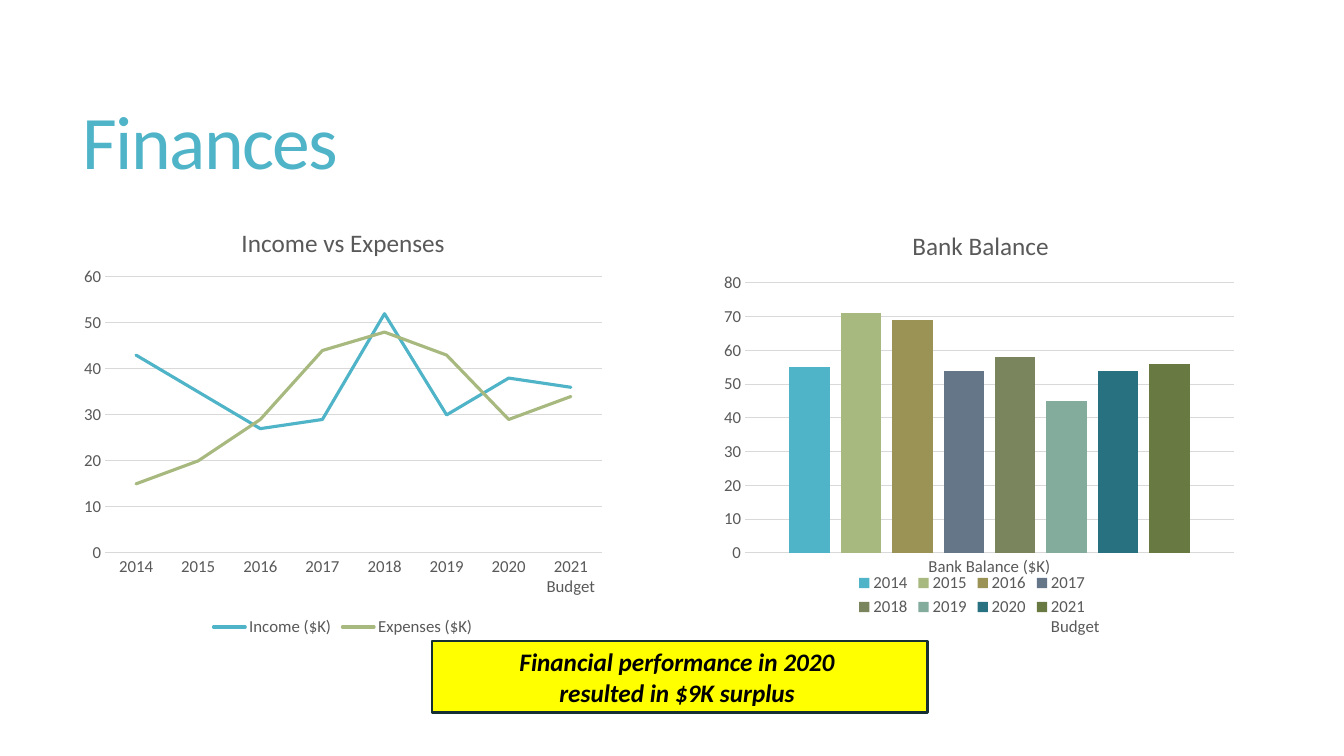
"""Build the finances slide with its two charts and callout."""
import pptx
import pptx.chart.data
import pptx.dml.color
import pptx.enum.chart
import pptx.enum.shapes
import pptx.enum.text
import pptx.oxml
import pptx.oxml.ns
import pptx.util

KIND = pptx.enum.chart.XL_CHART_TYPE
NOTE = "Financial performance in 2020 \vresulted in $9K surplus "
YEARS = ["2014", "2015", "2016", "2017", "2018", "2019", "2020"]
CHARTS = [
    {"title": "Income vs Expenses", "kind": KIND.LINE, "box": (73, 202, 540, 439),
     "plot": (105, 277, 497, 276), "head": (237, 221), "top": 60,
     "cats": YEARS + ["2021 Budget"],
     "rows": [("Income ($K)", [43, 35, 27, 29, 52, 30, 38, 36]),
              ("Expenses ($K)", [15, 20, 29, 44, 48, 43, 29, 34])]},
    {"title": "Bank Balance", "kind": KIND.COLUMN_CLUSTERED, "box": (714, 202, 531, 439),
     "plot": (745, 283, 489, 270), "head": (908, 224), "top": 80,
     "cats": ["Bank Balance ($K)"],
     "rows": [(year, [val]) for year, val in zip(
         YEARS + ["2021 \nBudget"], [55, 71, 69, 54, 58, 45, 54, 56])]},
]
THEME = {
    "font": "Calibri", "title": "50B4C8", "text": "595959", "grid": "D9D9D9",
    "ink": "000000", "note": "FFFF00", "edge": "162F33",
    "series": ["50B4C8", "A8B97F", "9B9256", "657689",
               "7A855D", "84AC9D", "287180", "697942"],
    "big": 54, "mid": 18, "small": 12,
}
SCALE = 12192000 / 1344


def px(*nums):
    return [round(num * SCALE) for num in nums]


def put(item, vals):
    for name, val in vals.items():
        setattr(item, name, val)


def rgb(name):
    return pptx.dml.color.RGBColor.from_string(THEME.get(name, name))


def ink(font, size, color, **more):
    put(font, {"name": THEME["font"], "size": pptx.util.Pt(THEME[size]), **more})
    font.color.rgb = rgb(color)


def stroke(line, color, width):
    line.color.rgb = rgb(color)
    line.width = pptx.util.Pt(width)


def place(node, spot, box, index):
    left, top, wide, high = box
    vals = {"x": (spot[0] - left) / wide, "y": (spot[1] - top) / high}
    inner = ""
    if len(spot) == 4:
        vals.update(w=spot[2] / wide, h=spot[3] / high)
        inner = '<c:layoutTarget val="inner"/>'
    modes = "".join(f'<c:{key}Mode val="edge"/>' for key in "xy")
    nums = "".join(f'<c:{key} val="{val:.4f}"/>' for key, val in vals.items())
    for old in node.findall(pptx.oxml.ns.qn("c:layout")):
        node.remove(old)
    node.insert(index, pptx.oxml.parse_xml(
        f'<c:layout {pptx.oxml.ns.nsdecls("c")}><c:manualLayout>'
        f'{inner}{modes}{nums}</c:manualLayout></c:layout>'))


def draw(slide, part):
    data = pptx.chart.data.CategoryChartData()
    data.categories = part["cats"]
    for name, vals in part["rows"]:
        data.add_series(name, vals)
    chart = slide.shapes.add_chart(part["kind"], *px(*part["box"]), data).chart
    ink(chart.font, "small", "text")
    put(chart, {"has_title": True, "has_legend": True})
    frame = chart.chart_title.text_frame
    frame.text = part["title"]
    ink(frame.paragraphs[0].runs[0].font, "mid", "text", bold=False)
    chart.chart_title.include_in_layout = False
    put(chart.legend, {"position": pptx.enum.chart.XL_LEGEND_POSITION.BOTTOM,
                       "include_in_layout": False})
    ink(chart.legend.font, "small", "text")
    for axis in (chart.category_axis, chart.value_axis):
        axis.major_tick_mark = pptx.enum.chart.XL_TICK_MARK.NONE
        ink(axis.tick_labels.font, "small", "text")
    stroke(chart.category_axis.format.line, "grid", 0.75)
    put(chart.value_axis, {"minimum_scale": 0, "maximum_scale": part["top"],
                           "major_unit": 10, "has_major_gridlines": True})
    stroke(chart.value_axis.major_gridlines.format.line, "grid", 0.75)
    chart.value_axis.format.line.fill.background()
    plot = chart.plots[0]
    plot.vary_by_categories = False
    lines = part["kind"] == KIND.LINE
    if not lines:
        put(plot, {"gap_width": 219, "overlap": -27})
    for row, color in zip(plot.series, THEME["series"]):
        if lines:
            row.smooth = False
            row.marker.style = pptx.enum.chart.XL_MARKER_STYLE.NONE
            stroke(row.format.line, color, 2.25)
            row.format.line._ln.set("cap", "rnd")
        else:
            row.format.fill.solid()
            row.format.fill.fore_color.rgb = rgb(color)
    place(plot._element.getparent(), part["plot"], part["box"], 0)
    place(chart.chart_title._element, part["head"], part["box"], 1)


def main():
    deck = pptx.Presentation()
    put(deck, dict(zip(("slide_width", "slide_height"), px(1344, 756))))
    slide = deck.slides.add_slide(deck.slide_layouts[6])
    middle = pptx.enum.text.MSO_ANCHOR.MIDDLE

    frame = slide.shapes.add_textbox(*px(73, 55, 1187, 182)).text_frame
    put(frame, {"text": "Finances", "word_wrap": True, "vertical_anchor": middle})
    frame.paragraphs[0].line_spacing = 0.85
    run = frame.paragraphs[0].runs[0]
    ink(run.font, "big", "title")
    run.font._element.set("spc", "-120")

    for part in CHARTS:
        draw(slide, part)

    note = slide.shapes.add_shape(
        pptx.enum.shapes.MSO_SHAPE.RECTANGLE, *px(432, 641, 496, 72))
    note.shadow.inherit = False
    note.fill.solid()
    note.fill.fore_color.rgb = rgb("note")
    stroke(note.line, "edge", 2)
    put(note.text_frame, {"text": NOTE, "word_wrap": True, "vertical_anchor": middle})
    line = note.text_frame.paragraphs[0]
    line.alignment = pptx.enum.text.PP_ALIGN.CENTER
    for run in line.runs:
        ink(run.font, "mid", "ink", bold=True, italic=True)
    deck.save("out.pptx")


if __name__ == "__main__":
    main()
